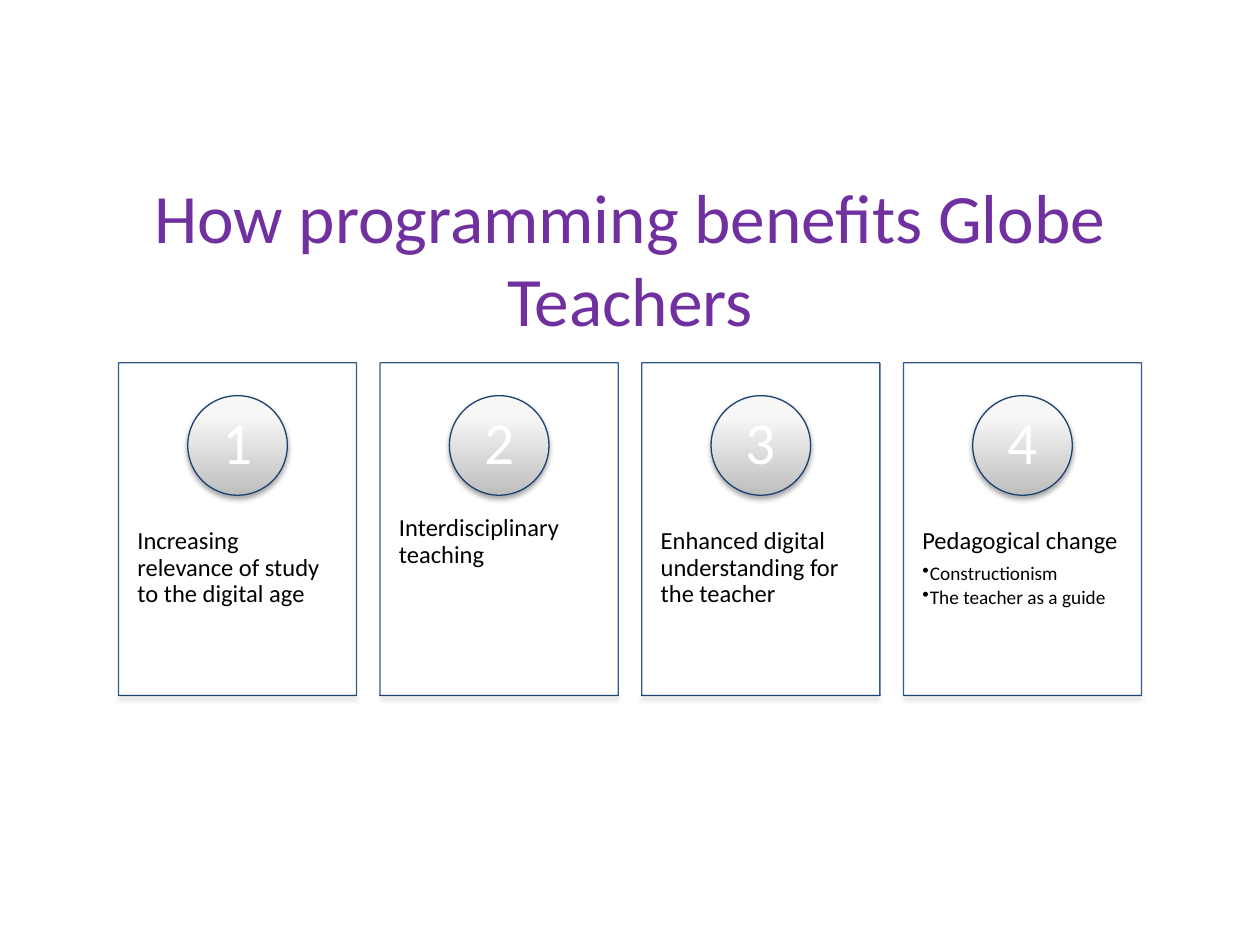
from copy import deepcopy
from dataclasses import dataclass

from lxml.etree import SubElement
from pptx import Presentation
from pptx.dml.color import RGBColor
from pptx.enum.shapes import MSO_SHAPE
from pptx.enum.text import MSO_ANCHOR, MSO_AUTO_SIZE, PP_ALIGN
from pptx.oxml.ns import qn
from pptx.util import Inches, Pt


@dataclass(frozen=True)
class Theme:
    font: str = "Calibri"
    title: str = "7030A0"
    text: str = "000000"
    number: str = "FFFFFF"
    card: str = "FFFFFF"
    card_line: str = "1F497D"
    badge_line: str = "1C4271"
    shadow: str = "000000"
    gradient: tuple = ((0, "BEBEBE"), (0.8, "F7F7F7"), (1, "F8F8F8"))
    title_size: float = 39.6
    number_size: float = 34
    text_size: float = 14
    bullet_size: float = 11
    line_width: float = 0.75


def write(p, text, size, color, font, align=PP_ALIGN.LEFT, spacing=None, after=0, bullet=None):
    p.alignment = align
    if spacing:
        p.line_spacing = spacing
    p.space_after = Pt(after)
    if bullet:
        p.level = 1
        pPr = p._p.get_or_add_pPr()
        pPr.set("marL", str(Inches(0.06)))
        pPr.set("indent", str(Inches(-0.06)))
        SubElement(pPr, qn("a:buChar"), char=bullet)
    r = p.add_run()
    r.text = text
    r.font.name = font
    r.font.size = Pt(size)
    r.font.color.rgb = RGBColor.from_string(color)


class Deck:
    def __init__(self, theme):
        self.theme = theme
        self.prs = Presentation()
        self.prs.slide_width, self.prs.slide_height = Inches(10), Inches(7.5)
        self.s = self.prs.slides.add_slide(self.prs.slide_layouts[5])

    def title(self, text, x, y, w, h):
        sp = self.s.shapes.title
        sp.left, sp.top, sp.width, sp.height = map(Inches, (x, y, w, h))
        tf = sp.text_frame
        tf.auto_size = MSO_AUTO_SIZE.NONE
        tf.word_wrap = True
        tf.vertical_anchor = MSO_ANCHOR.MIDDLE
        write(tf.paragraphs[0], text, self.theme.title_size, self.theme.title,
              self.theme.font, align=PP_ALIGN.CENTER)

    def shape(self, kind, x, y, w, h, line):
        sp = self.s.shapes.add_shape(kind, *map(Inches, (x, y, w, h)))
        sp.shadow.inherit = False
        sp.line.color.rgb = RGBColor.from_string(line)
        sp.line.width = Pt(self.theme.line_width)
        return sp

    def panel(self, x, y, w, h):
        sp = self.shape(MSO_SHAPE.RECTANGLE, x, y, w, h, self.theme.card_line)
        sp.fill.solid()
        sp.fill.fore_color.rgb = RGBColor.from_string(self.theme.card)
        for color in sp._element.spPr.iter(qn("a:srgbClr")):
            SubElement(color, qn("a:alpha"), val="90000")

    def raised(self, kind, x, y, w, h):
        sp = self.shape(kind, x, y, w, h, self.theme.badge_line)
        sp.fill.gradient()
        sp.fill.gradient_angle = 90
        spPr = sp._element.spPr
        stops = spPr.find(qn("a:gradFill")).find(qn("a:gsLst"))
        stops.append(deepcopy(stops[-1]))
        for stop, (position, color) in zip(sp.fill.gradient_stops, self.theme.gradient):
            stop.position = position
            stop.color.rgb = RGBColor.from_string(color)
        shadow = SubElement(spPr.find(qn("a:effectLst")), qn("a:outerShdw"),
                            blurRad=str(Pt(3.1)), dist=str(Pt(1.8)), dir="5400000",
                            rotWithShape="0")
        color = SubElement(shadow, qn("a:srgbClr"), val=self.theme.shadow)
        SubElement(color, qn("a:alpha"), val="35000")

    def text_box(self, x, y, w, h, inset_x, inset_y, anchor=MSO_ANCHOR.TOP):
        tf = self.s.shapes.add_textbox(*map(Inches, (x, y, w, h))).text_frame
        tf.word_wrap = True
        tf.vertical_anchor = anchor
        tf.margin_left = tf.margin_right = Inches(inset_x)
        tf.margin_top = tf.margin_bottom = Inches(inset_y)
        return tf

    def number(self, text, x, y, size):
        tf = self.text_box(x, y, size, size, 0.06, 0.01, MSO_ANCHOR.MIDDLE)
        write(tf.paragraphs[0], text, self.theme.number_size, self.theme.number,
              self.theme.font, align=PP_ALIGN.CENTER, spacing=0.9)

    def body(self, heading, bullets, x, y, w, h):
        t = self.theme
        tf = self.text_box(x, y, w, h, 0.15, 0.36)
        write(tf.paragraphs[0], heading, t.text_size, t.text, t.font,
              spacing=0.9, after=0.35 * t.text_size)
        for bullet in bullets:
            write(tf.add_paragraph(), bullet, t.bullet_size, t.text, t.font,
                  spacing=0.9, after=0.15 * t.bullet_size, bullet="•")

    def card(self, number, heading, bullets, x, y, w, h):
        badge, digit = 0.79, 0.56
        badge_x, badge_y = x + (w - badge) / 2, y + 0.26
        inset = (badge - digit) / 2
        self.panel(x, y, w, h)
        self.body(heading, bullets, x, y + 1, w, 1.59)
        self.raised(MSO_SHAPE.OVAL, badge_x, badge_y, badge, badge)
        self.number(str(number), badge_x + inset, badge_y + inset, digit)
        self.raised(MSO_SHAPE.RECTANGLE, x, y + h, w, 0)


def main():
    left, width, card_width = 0.94, 8.12, 1.89
    benefits = [
        ("Increasing relevance of study to the digital age", []),
        ("Interdisciplinary teaching", []),
        ("Enhanced digital understanding for the teacher", []),
        ("Pedagogical change", ["Constructionism", "The teacher as a guide"]),
    ]
    pitch = (width - card_width) / (len(benefits) - 1)
    deck = Deck(Theme())
    deck.title("How programming benefits Globe Teachers", left, 1.44, width, 1.2)
    for i, (heading, bullets) in enumerate(benefits):
        deck.card(i + 1, heading, bullets, left + i * pitch, 2.88, card_width, 2.64)
    deck.prs.save("out.pptx")


if __name__ == "__main__":
    main()
